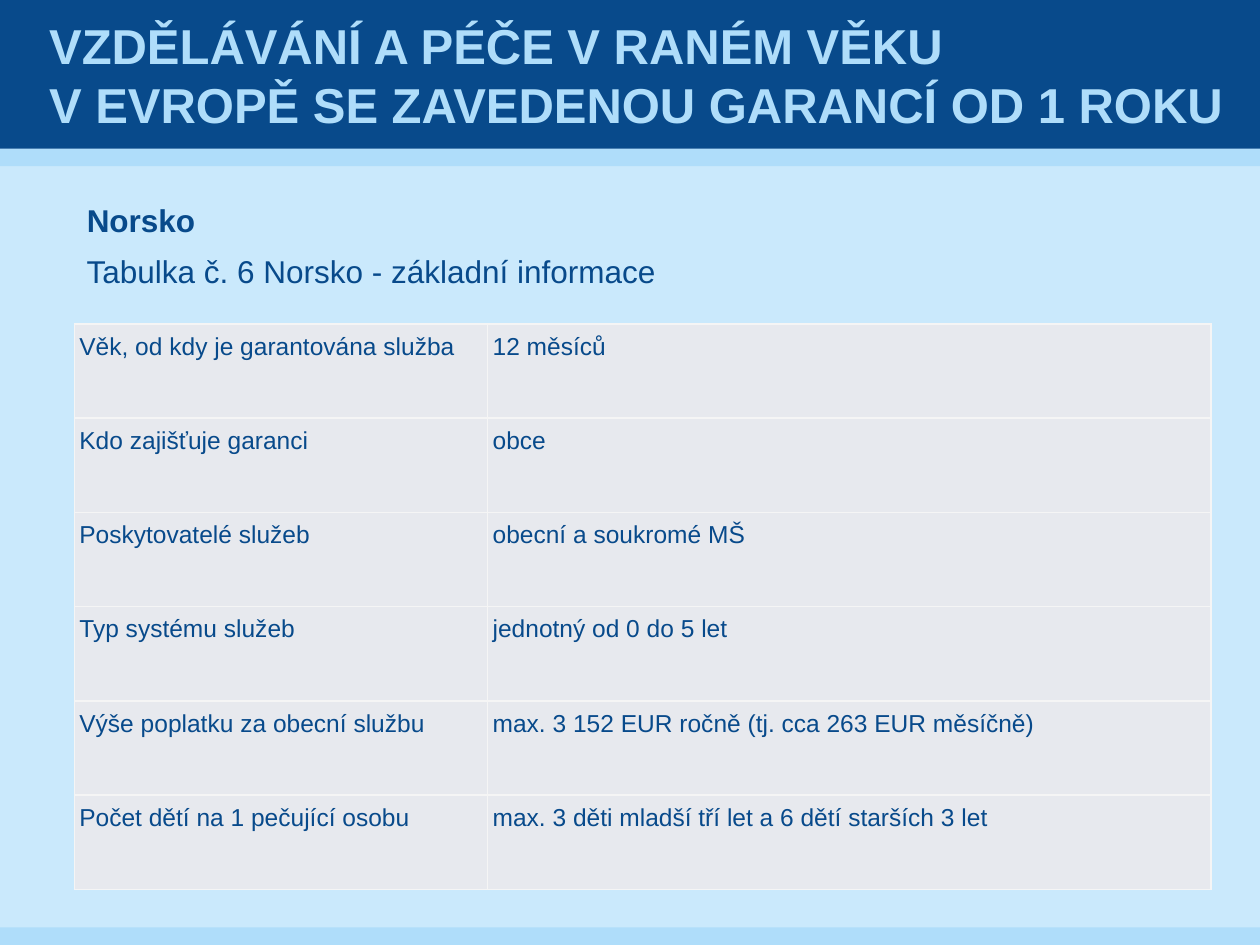
from typing import NamedTuple

from lxml.etree import SubElement
from pptx import Presentation
from pptx.dml.color import RGBColor
from pptx.enum.shapes import MSO_SHAPE as Preset
from pptx.enum.text import MSO_ANCHOR as Anchor, MSO_AUTO_SIZE as AutoSize, PP_ALIGN as Align
from pptx.oxml.ns import qn
from pptx.util import Inches, Pt

NAVY = RGBColor(0x08, 0x4A, 0x8B)
SKY = RGBColor(0xAF, 0xDD, 0xFA)
PALE_SKY = RGBColor(0xCA, 0xE9, 0xFC)
CELL_GREY = RGBColor(0xE7, 0xE9, 0xEE)
BORDER = RGBColor(0xF5, 0xF5, 0xF5)
FONT = "Arial"
SLIDE_WIDTH = 10
LEFT = 0.59


class Band(NamedTuple):
    top: float
    height: float
    color: RGBColor


class Caption(NamedTuple):
    text: str
    top: float
    width: float
    bold: bool


class Fact(NamedTuple):
    label: str
    value: str


BANDS = [Band(1.18, 0.14, SKY), Band(0, 1.18, NAVY), Band(7.36, 0.14, SKY)]
CAPTIONS = [
    Caption("Norsko", 1.55, 5.51, True),
    Caption("Tabulka č. 6 Norsko - základní informace", 1.95, 6.54, False),
]
FACTS = [
    Fact("Věk, od kdy je garantována služba", "12 měsíců"),
    Fact("Kdo zajišťuje garanci", "obce"),
    Fact("Poskytovatelé služeb", "obecní a soukromé MŠ"),
    Fact("Typ systému služeb", "jednotný od 0 do 5 let"),
    Fact("Výše poplatku za obecní službu", "max. 3 152 EUR ročně (tj. cca 263 EUR měsíčně)"),
    Fact("Počet dětí na 1 pečující osobu", "max. 3 děti mladší tří let a 6 dětí starších 3 let"),
]
TITLE = "VZDĚLÁVÁNÍ A PÉČE V RANÉM VĚKU \vV EVROPĚ SE ZAVEDENOU GARANCÍ OD 1 ROKU"


def apply(target, settings: dict) -> None:
    for attribute, value in settings.items():
        setattr(target, attribute, value)


def style_font(paragraph, size: float, color: RGBColor, bold: bool = False) -> None:
    for run in paragraph.runs:
        apply(run.font, {"name": FONT, "size": Pt(size), "bold": bold})
        run.font.color.rgb = color


def draw_band(slide, band: Band) -> None:
    bar = slide.shapes.add_shape(
        Preset.RECTANGLE, 0, Inches(band.top), Inches(SLIDE_WIDTH), Inches(band.height)
    )
    bar.shadow.inherit = False
    bar.fill.solid()
    bar.fill.fore_color.rgb = band.color
    bar.line.fill.background()


def draw_caption(slide, caption: Caption) -> None:
    box = slide.shapes.add_textbox(
        Inches(LEFT), Inches(caption.top), Inches(caption.width), Inches(0.4)
    )
    frame = box.text_frame
    apply(frame, {"text": caption.text, "word_wrap": True, "auto_size": AutoSize.SHAPE_TO_FIT_TEXT})
    style_font(frame.paragraphs[0], 18, NAVY, caption.bold)


def draw_borders(cell) -> None:
    properties = cell._tc.get_or_add_tcPr()
    for position, side in enumerate(("lnL", "lnR", "lnT", "lnB")):
        line = SubElement(properties, qn(f"a:{side}"), w=str(Pt(1)))
        fill = SubElement(line, qn("a:solidFill"))
        SubElement(fill, qn("a:srgbClr"), val=str(BORDER))
        properties.insert(position, line)


def fill_cell(cell, text: str) -> None:
    margins = ("margin_left", "margin_right", "margin_top", "margin_bottom")
    apply(cell, {"text": text, **dict.fromkeys(margins, Inches(0.04))})
    cell.fill.solid()
    cell.fill.fore_color.rgb = CELL_GREY
    draw_borders(cell)
    paragraph = cell.text_frame.paragraphs[0]
    apply(paragraph, {"alignment": Align.JUSTIFY, "line_spacing": 1.15, "space_before": Pt(6)})
    style_font(paragraph, 14, NAVY)


def draw_facts(slide, facts: list[Fact]) -> None:
    table = slide.shapes.add_table(
        len(facts), 2, Inches(LEFT), Inches(2.57), Inches(9.02), Inches(4.49)
    ).table
    apply(table, {"first_row": False, "horz_banding": False})
    for column, width in zip(table.columns, (3.28, 5.74)):
        column.width = Inches(width)
    for row, fact in zip(table.rows, facts):
        for cell, text in zip(row.cells, fact):
            fill_cell(cell, text)


def draw_title(slide) -> None:
    title = slide.shapes.title
    apply(title, {"left": Inches(0.35), "top": 0, "width": Inches(9.45), "height": Inches(1.18)})
    frame = title.text_frame
    apply(frame, {
        "text": TITLE,
        "word_wrap": True,
        "auto_size": AutoSize.NONE,
        "vertical_anchor": Anchor.MIDDLE,
        "margin_left": Inches(0.04),
        "margin_right": Inches(0.04),
        "margin_top": 0,
        "margin_bottom": 0,
    })
    frame.paragraphs[0].alignment = Align.LEFT
    style_font(frame.paragraphs[0], 28, SKY, True)
    slide.shapes._spTree.append(title._element)


def main() -> None:
    deck = Presentation()
    apply(deck, {"slide_width": Inches(SLIDE_WIDTH), "slide_height": Inches(7.5)})
    slide = deck.slides.add_slide(deck.slide_layouts[5])
    slide.background.fill.solid()
    slide.background.fill.fore_color.rgb = PALE_SKY
    for band in BANDS:
        draw_band(slide, band)
    draw_facts(slide, FACTS)
    for caption in CAPTIONS:
        draw_caption(slide, caption)
    draw_title(slide)
    deck.save("out.pptx")


if __name__ == "__main__":
    main()
